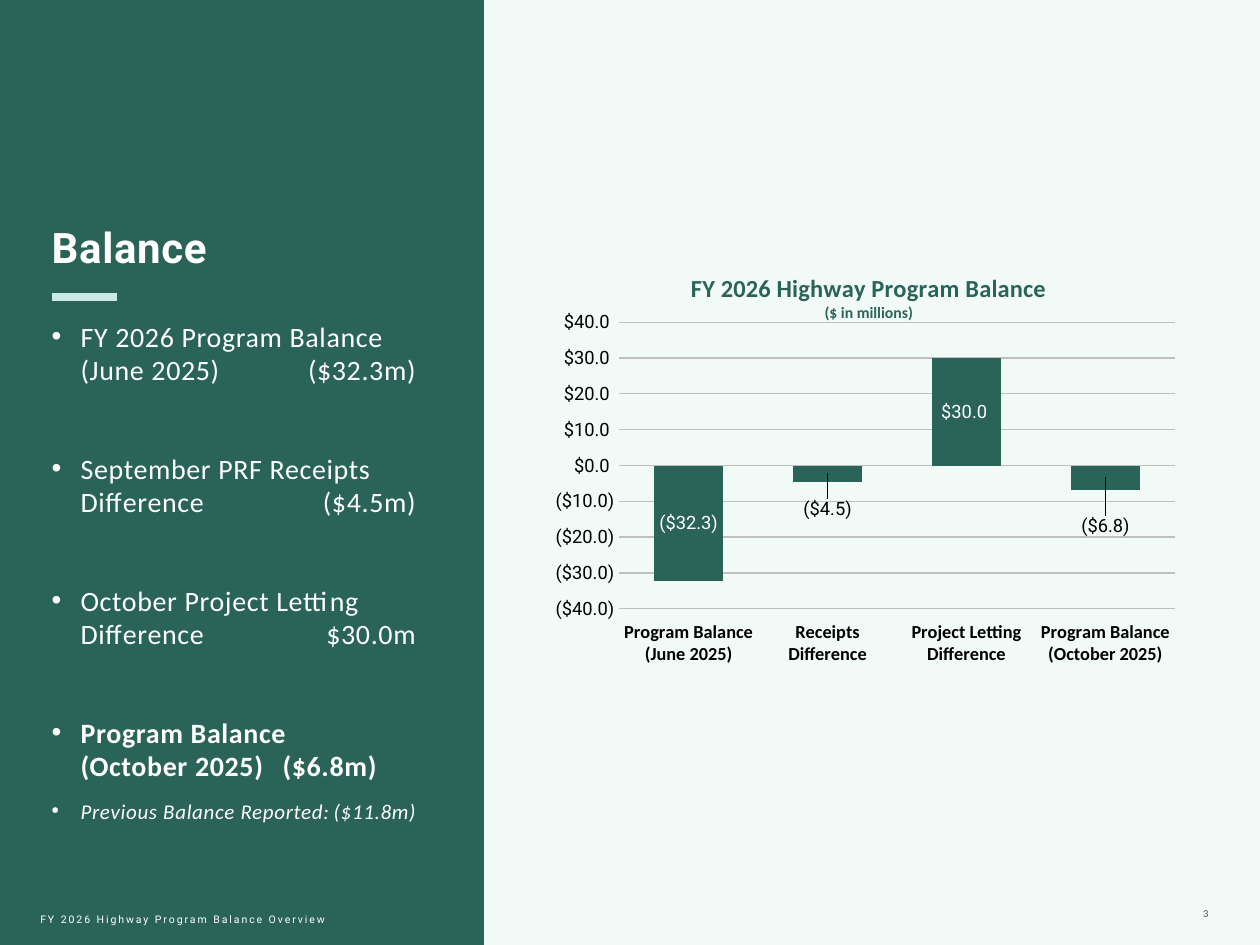
from lxml.etree import SubElement
from pptx import Presentation
from pptx.chart.data import CategoryChartData
from pptx.dml.color import RGBColor
from pptx.enum.chart import XL_CHART_TYPE, XL_LABEL_POSITION, XL_TICK_LABEL_POSITION, XL_TICK_MARK
from pptx.enum.shapes import MSO_CONNECTOR, MSO_SHAPE
from pptx.enum.text import MSO_ANCHOR, PP_ALIGN
from pptx.oxml import parse_xml
from pptx.oxml.ns import nsdecls, qn
from pptx.util import Inches, Pt

COLORS = {"green": "2A6357", "mint": "CBE9E3", "pale": "F2FAF8", "white": "FFFFFF",
          "gray": "4D4D4F", "grid": "BFBFBF", "black": "000000"}
WIDTH, HEIGHT = 10, 7.5
PANEL = 0.384  # share of the slide width
MARGIN = 0.41
INDENT = 0.23
MONEY = '"$"#,##0.0_);\\("$"#,##0.0\\)'

# Text, amount, right edge of the amount, space before, size, bold, italic
ITEMS = [
    ("FY 2026 Program Balance\v(June 2025)", "($32.3m)", 2.96, 9, 16, False, False),
    ("September PRF Receipts\vDifference", "($4.5m)", 2.94, 37, 16, False, False),
    ("October Project Letting\vDifference", "$30.0m", 2.96, 37, 16, False, False),
    ("Program Balance\v(October 2025)", "($6.8m)", 2.58, 37, 16, True, False),
    ("Previous Balance Reported:", "($11.8m)", 2.97, 9, 12, False, True),
]
# Category, value, label colour, label shift as a share of the chart height
BARS = [
    ("Program Balance (June 2025)", -32.3, "white", 0),
    ("Receipts Difference", -4.5, "black", 0.08),
    ("Project Letting Difference", 30, "white", 0),
    ("Program Balance (October 2025)", -6.8, "black", 0.11),
]


def color(name):
    return RGBColor.from_string(COLORS[name])


def set_font(font, name, size, color_name, bold=False, italic=False):
    font.name, font.size = name, Pt(size)
    font.bold, font.italic = bold, italic
    font.color.rgb = color(color_name)


def set_spacing(paragraph, points):
    for run in paragraph.runs:
        run.font._element.set("spc", str(round(points * 100)))


def add_text_box(slide, left, top, width, height, anchor=MSO_ANCHOR.TOP):
    frame = slide.shapes.add_textbox(*map(Inches, (left, top, width, height))).text_frame
    frame.word_wrap = True
    frame.vertical_anchor = anchor
    frame.margin_left = frame.margin_right = frame.margin_top = frame.margin_bottom = 0
    return frame


def add_caption(slide, text, box, font_name, color_name, anchor, alignment):
    frame = add_text_box(slide, *box, anchor)
    frame.margin_top = frame.margin_bottom = Inches(0.05)
    paragraph = frame.paragraphs[0]
    paragraph.text, paragraph.alignment = text, alignment
    set_font(paragraph.font, font_name, 6, color_name)
    set_spacing(paragraph, 1.1)


def add_panel(slide):
    panel = slide.shapes.add_shape(MSO_SHAPE.RECTANGLE, 0, 0, Inches(WIDTH * PANEL), Inches(HEIGHT))
    panel.shadow.inherit = False
    panel.fill.solid()
    panel.fill.fore_color.rgb = color("green")
    panel.line.fill.background()


def add_accent(slide, left, right, top):
    line = slide.shapes.add_connector(MSO_CONNECTOR.STRAIGHT, *map(Inches, (left, top, right, top)))
    line.line.color.rgb = color("mint")
    line.line.width = Pt(4.5)
    SubElement(line._element.spPr, qn("a:effectLst"))


def add_item(frame, text, amount, edge, before, size, bold, italic):
    paragraph = frame.add_paragraph()
    paragraph.text = f"{text}\t{amount}"
    paragraph.space_before = Pt(before)
    properties = paragraph._p.get_or_add_pPr()
    properties.set("marL", str(Inches(INDENT)))
    properties.set("indent", str(-Inches(INDENT)))
    SubElement(properties, qn("a:buFont"), typeface="Arial")
    SubElement(properties, qn("a:buChar"), char="•")
    tabs = SubElement(properties, qn("a:tabLst"))
    SubElement(tabs, qn("a:tab"), pos=str(Inches(edge)), algn="r")
    set_font(paragraph.font, "Calibri", size, "white", bold, italic)
    set_spacing(paragraph, 0.4)


def add_summary(slide):
    frame = add_text_box(slide, MARGIN, 1.76, 3.12, 4.83)
    heading = frame.paragraphs[0]
    heading.text = "Balance"
    heading.space_after = Pt(18)
    set_font(heading.font, "Roboto", 24, "white", bold=True)
    set_spacing(heading, 0.4)
    for item in ITEMS:
        add_item(frame, *item)


def make_layout(x, y, width=None, height=None, inner=False):
    target = '<c:layoutTarget val="inner"/>' if inner else ""
    modes = '<c:xMode val="edge"/><c:yMode val="edge"/>' if inner or x else ""
    size = f'<c:w val="{width}"/><c:h val="{height}"/>' if width else ""
    return parse_xml(f'<c:layout {nsdecls("c")}><c:manualLayout>{target}{modes}'
                     f'<c:x val="{x}"/><c:y val="{y}"/>{size}</c:manualLayout></c:layout>')


def replace_layout(parent, layout, position):
    for old in parent.findall(qn("c:layout")):
        parent.remove(old)
    parent.insert(position, layout)


def add_chart_title(chart):
    title = chart.chart_title
    frame = title.text_frame
    lines = [("FY 2026 Highway Program Balance", 14), ("($ in millions)", 9)]
    for index, (text, size) in enumerate(lines):
        paragraph = frame.add_paragraph() if index else frame.paragraphs[0]
        run = paragraph.add_run()
        run.text = text
        set_font(run.font, "Calibri", size, "green", bold=True)
    replace_layout(title._element, make_layout(0.21, 0.02), 1)


def style_axes(chart):
    category, value = chart.category_axis, chart.value_axis
    for axis in (category, value):
        axis.major_tick_mark = axis.minor_tick_mark = XL_TICK_MARK.NONE
    category.tick_label_position = XL_TICK_LABEL_POSITION.LOW
    set_font(category.tick_labels.font, "Calibri", 10.5, "black", bold=True)
    set_font(value.tick_labels.font, "Roboto", 10.5, "black")
    value.tick_labels.number_format = MONEY
    value.tick_labels.number_format_is_linked = False
    value.minimum_scale, value.maximum_scale, value.major_unit = -40, 40, 10
    value.format.line.fill.background()
    for line in (category.format.line, value.major_gridlines.format.line):
        line.color.rgb = color("grid")
        line.width = Pt(0.75)


def style_bars(plot):
    plot.gap_width, plot.overlap = 100, -24
    plot.vary_by_categories = False
    series = plot.series[0]
    series.invert_if_negative = False
    series.format.fill.solid()
    series.format.fill.fore_color.rgb = color("green")
    labels = series.data_labels
    labels.show_value = True
    labels.number_format, labels.number_format_is_linked = MONEY, False
    labels.position = XL_LABEL_POSITION.CENTER
    set_font(labels.font, "Roboto", 10.5, "black")
    for index, (_, _, color_name, shift) in enumerate(BARS):
        label = series.points[index].data_label
        set_font(label.font, "Roboto", 10.5, color_name)
        label.position = XL_LABEL_POSITION.CENTER
        if shift:
            replace_layout(labels._element.findall(qn("c:dLbl"))[index], make_layout(0, shift), 1)


def add_balance_chart(slide):
    data = CategoryChartData(number_format=MONEY)
    data.categories = [bar[0] for bar in BARS]
    data.add_series("Series 1", [bar[1] for bar in BARS])
    chart = slide.shapes.add_chart(XL_CHART_TYPE.COLUMN_CLUSTERED,
                                   *map(Inches, (4.41, 2.05, 4.92, 3.5)), data).chart
    chart.has_legend = False
    set_font(chart.font, "Roboto", 10, "black")
    add_chart_title(chart)
    style_axes(chart)
    style_bars(chart.plots[0])
    plot_area = chart._chartSpace.chart.plotArea
    replace_layout(plot_area, make_layout(0.1, 0.145, 0.9, 0.65, inner=True), 0)


def main():
    presentation = Presentation()
    presentation.slide_width, presentation.slide_height = Inches(WIDTH), Inches(HEIGHT)
    slide = presentation.slides.add_slide(presentation.slide_layouts[6])
    slide.background.fill.solid()
    slide.background.fill.fore_color.rgb = color("pale")
    # Left panel with the balance summary
    add_panel(slide)
    add_summary(slide)
    add_accent(slide, MARGIN, 0.93, 2.36)
    # Chart on the right
    add_balance_chart(slide)
    # Footer and page number
    add_caption(slide, "FY 2026 Highway Program Balance Overview", (0.32, 7.15, 3.04, 0.3),
                "Roboto", "white", MSO_ANCHOR.MIDDLE, PP_ALIGN.LEFT)
    add_caption(slide, "3", (8.62, 6.95, 0.97, 0.4),
                "Calibri", "gray", MSO_ANCHOR.BOTTOM, PP_ALIGN.RIGHT)
    presentation.save("out.pptx")


if __name__ == "__main__":
    main()
